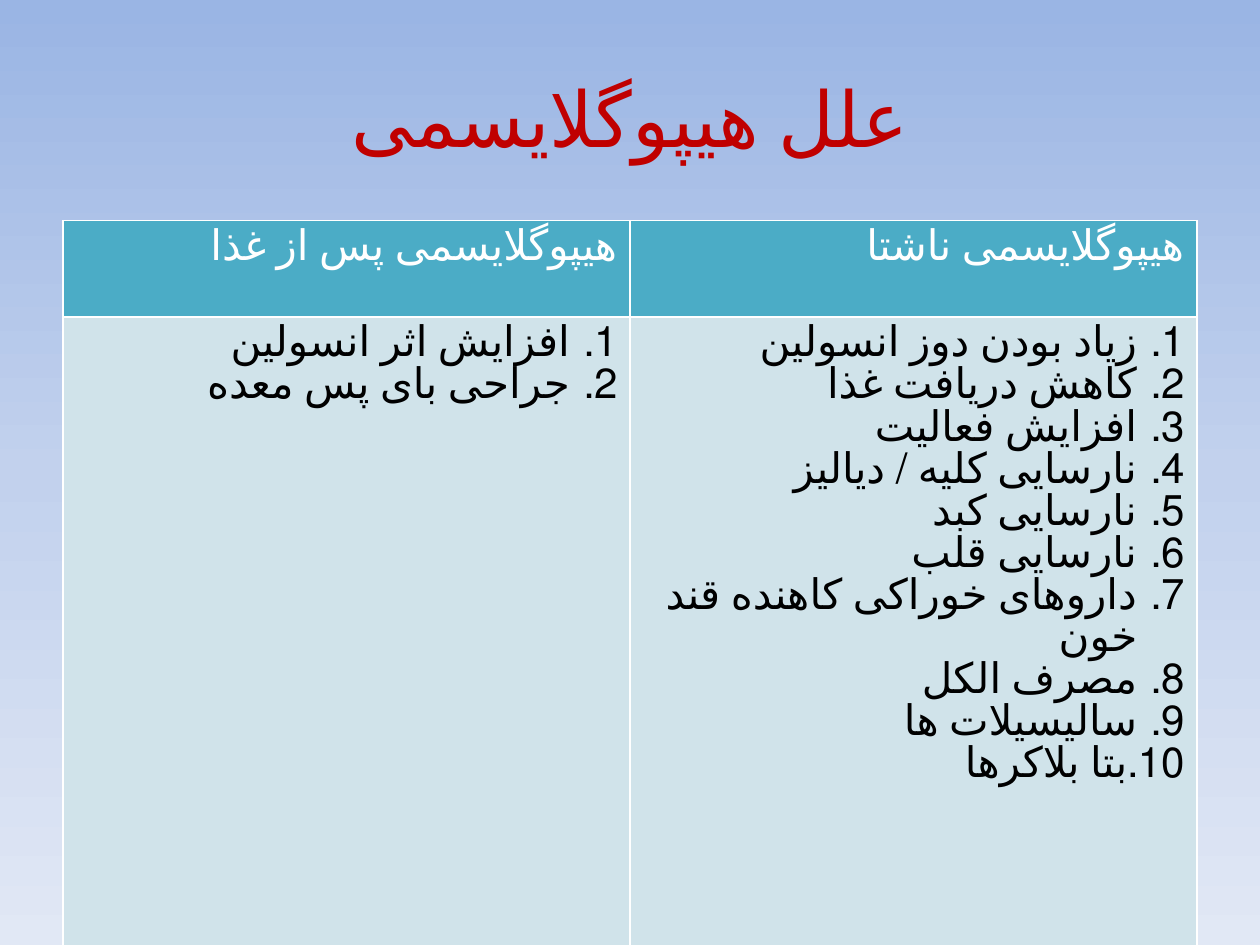
from copy import deepcopy
from dataclasses import dataclass

from lxml.etree import SubElement
from pptx import Presentation
from pptx.dml.color import RGBColor
from pptx.enum.text import MSO_ANCHOR as Anchor, PP_ALIGN as Align
from pptx.oxml.ns import qn
from pptx.util import Pt


@dataclass
class Column:
    heading: str
    causes: list[str]


COLUMNS = [
    Column("هیپوگلایسمی پس از غذا", ["افزایش اثر انسولین", "جراحی بای پس معده"]),
    Column("هیپوگلایسمی ناشتا", [
        "زیاد بودن دوز انسولین",
        "کاهش دریافت غذا",
        "افزایش فعالیت",
        "نارسایی کلیه / دیالیز",
        "نارسایی کبد",
        "نارسایی قلب",
        "داروهای خوراکی کاهنده قند خون",
        "مصرف الکل",
        "سالیسیلات ها",
        "بتا بلاکرها",
    ]),
]
BACKGROUND = [(0, "9AB5E4"), (0.5, "C2D1ED"), (1, "E1E8F5")]
TITLE = {"size": Pt(44), "name": "Calibri", "color": "C00000"}
HEADING = {"size": Pt(24), "name": "Calibri", "color": "FFFFFF", "bold": False}
CAUSE = {"size": Pt(24), "name": "Arial", "color": "000000", "bold": False}


def rgb(value: str) -> RGBColor:
    return RGBColor.from_string(value)


def write(p, text: str, fmt: dict, align: Align) -> None:
    """Write one right-to-left Persian paragraph."""
    p.alignment = align
    p._p.get_or_add_pPr().set("rtl", "1")
    r = p.add_run()
    r.text = text
    r._r.get_or_add_rPr().set("lang", "fa-IR")
    for key, value in fmt.items():
        if key == "color":
            r.font.color.rgb = rgb(value)
        else:
            setattr(r.font, key, value)


def number(p, indent: int) -> None:
    pPr = p._p.get_or_add_pPr()
    pPr.set("marL", str(indent))
    pPr.set("indent", str(-indent))
    SubElement(pPr, qn("a:buFont"), typeface="+mj-lt")
    SubElement(pPr, qn("a:buAutoNum"), type="arabicPeriod")


def style_cell(cell, fill: str, border: str) -> None:
    tcPr = cell._tc.get_or_add_tcPr()
    for side in ("lnL", "lnR", "lnT", "lnB"):
        ln = SubElement(tcPr, qn(f"a:{side}"), w=str(Pt(1)))
        SubElement(SubElement(ln, qn("a:solidFill")), qn("a:srgbClr"), val=border)
    cell.fill.solid()
    cell.fill.fore_color.rgb = rgb(fill)


def fill_cell(cell, lines: list[str], fmt: dict, fill: str, numbered: bool) -> None:
    style_cell(cell, fill, "FFFFFF")
    tf = cell.text_frame
    for i, line in enumerate(lines):
        p = tf.add_paragraph() if i else tf.paragraphs[0]
        write(p, line, fmt, Align.RIGHT)
        if numbered:
            number(p, Pt(27))


def paint_background(s) -> None:
    fill = s.background.fill
    fill.gradient()
    fill.gradient_angle = 270
    stops = s._element.find(".//" + qn("a:gsLst"))
    stops.append(deepcopy(stops[-1]))
    for stop, (position, color) in zip(fill.gradient_stops, BACKGROUND):
        stop.position = position
        stop.color.rgb = rgb(color)


def main() -> None:
    prs = Presentation()
    prs.slide_width, prs.slide_height = Pt(720), Pt(540)
    s = prs.slides.add_slide(prs.slide_layouts[5])
    paint_background(s)

    # Title
    title = s.shapes.title
    title.left, title.top, title.width, title.height = Pt(36), Pt(21.6), Pt(648), Pt(90)
    title.text_frame.vertical_anchor = Anchor.MIDDLE
    write(title.text_frame.paragraphs[0], "علل هیپوگلایسمی", TITLE, Align.CENTER)

    # Table of causes, one column per kind
    heights = [Pt(55.2), Pt(360)]
    table = s.shapes.add_table(2, len(COLUMNS), Pt(36), Pt(126), Pt(648), sum(heights)).table
    for row, height in zip(table.rows, heights):
        row.height = height
    for i, column in enumerate(COLUMNS):
        table.columns[i].width = Pt(648 / len(COLUMNS))
        fill_cell(table.cell(0, i), [column.heading], HEADING, "4BACC6", False)
        fill_cell(table.cell(1, i), column.causes, CAUSE, "D0E3EA", True)

    prs.save("out.pptx")


if __name__ == "__main__":
    main()
